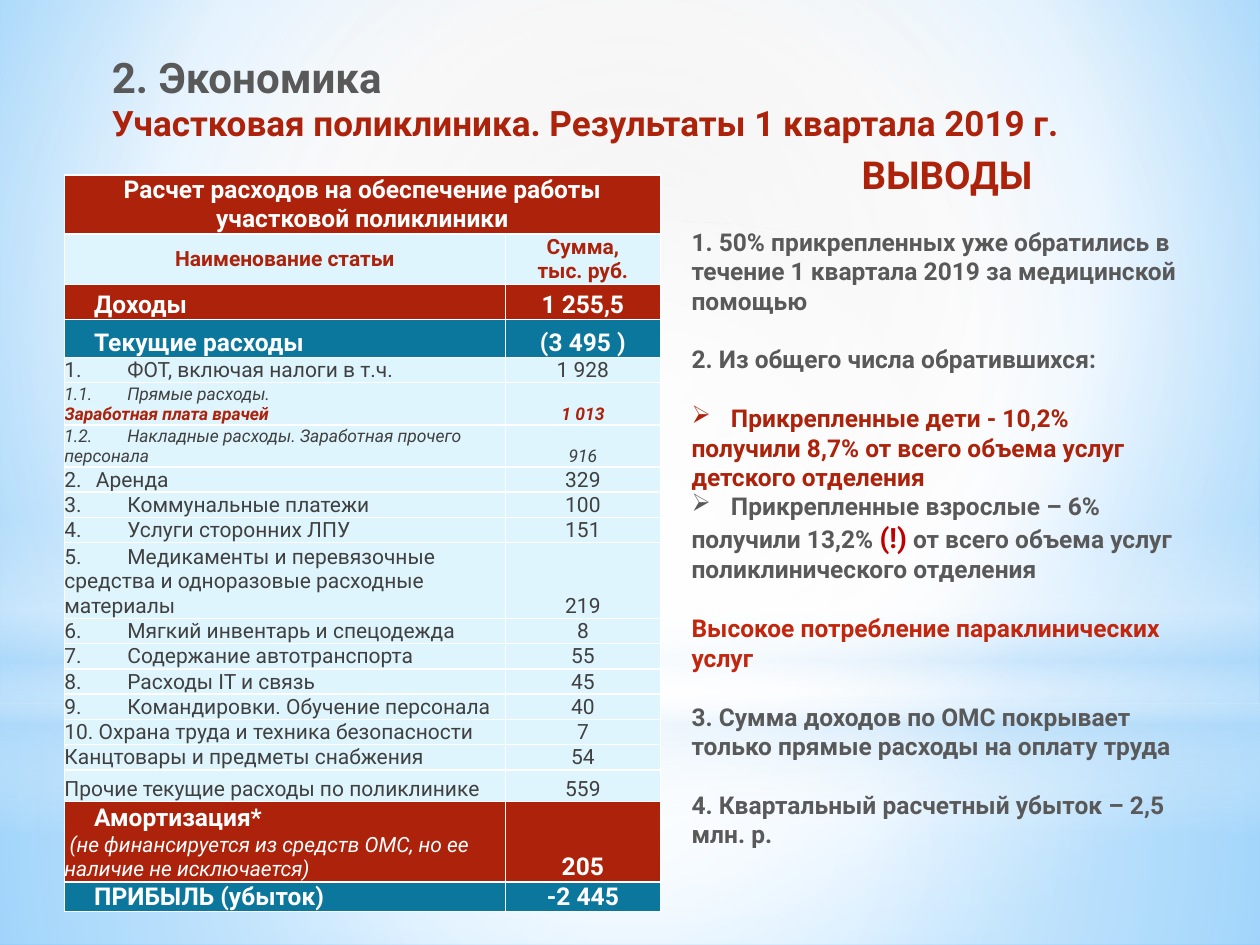
"""Build the slide on the clinic's first-quarter economics."""
from lxml import etree
from pptx import Presentation
from pptx.dml.color import RGBColor
from pptx.enum.shapes import MSO_SHAPE
from pptx.enum.text import MSO_ANCHOR, MSO_AUTO_SIZE, PP_ALIGN
from pptx.oxml.ns import qn
from pptx.util import Pt

RECT, OVAL = MSO_SHAPE.RECTANGLE, MSO_SHAPE.OVAL
LEFT, MID = PP_ALIGN.LEFT, PP_ALIGN.CENTER
BASE, CORE = MSO_ANCHOR.BOTTOM, MSO_ANCHOR.MIDDLE
GROW = MSO_AUTO_SIZE.SHAPE_TO_FIT_TEXT
FONT = "Roboto"
GAP = 16.8
STEP = 17
HEX = {
    "white": "FFFFFF", "mist": "D9D9D9", "sky": "5BB9FF", "haze": "B4DCFA",
    "red": "AD220B", "teal": "0C779D", "pale": "DFF5FD", "gray": "595959",
    "dark": "404040", "alert": "C00000", "warm": "C3260C",
}


def node(root, tag, **attrs):
    """Append a drawing element with the given attributes."""
    return etree.SubElement(root, qn("a:" + tag), {k: str(v) for k, v in attrs.items()})


def blend(root, fill, stops, focus=None):
    """Fill with a circular gradient around focus, or a vertical one."""
    fill.gradient()
    grad = next(root.iter(qn("a:gradFill")))
    for child in list(grad):
        grad.remove(child)
    row = node(grad, "gsLst")
    for pos, name, alpha in stops:
        tint = node(node(row, "gs", pos=pos * 1000), "srgbClr", val=HEX[name])
        if alpha < 100:
            node(tint, "alpha", val=alpha * 1000)
    if focus:
        ring = node(grad, "path", path="circle")
        node(ring, "fillToRect", **{k: v * 1000 for k, v in zip("ltrb", focus)})
    else:
        node(grad, "lin", ang=90 * 60000, scaled=0)


def veil(slide, kind, box, stops, focus=None):
    """Add a borderless shape with a translucent gradient."""
    shape = slide.shapes.add_shape(kind, *map(Pt, box))
    shape.shadow.inherit = False
    shape.line.fill.background()
    blend(shape.element, shape.fill, stops, focus)


def write(para, runs, align=LEFT, space=0):
    """Add runs of (text, size, colour, style) to a paragraph."""
    para.alignment = align
    para.space_before = Pt(space)
    for text, size, tint, style in runs:
        if text == "\n":
            para.add_line_break()
            continue
        run = para.add_run()
        run.text = text
        font = run.font
        font.name, font.size = FONT, Pt(size)
        font.bold, font.italic = "b" in style, "i" in style
        font.color.rgb = RGBColor.from_string(HEX[tint])


def inset(para, first, left=0):
    """Set the first-line indent and left margin."""
    props = para._p.get_or_add_pPr()
    props.set("marL", str(Pt(left)))
    props.set("indent", str(Pt(first)))
    return props


def label(slide, box, lines):
    """Add a text box of (runs, align, space, bullet) lines."""
    shape = slide.shapes.add_textbox(*map(Pt, box))
    frame = shape.text_frame
    frame.word_wrap = True
    frame.auto_size = GROW
    for num, (runs, align, space, mark) in enumerate(lines):
        para = frame.add_paragraph() if num else frame.paragraphs[0]
        write(para, runs, align, space)
        if mark:
            node(inset(para, -22.5, 22.5), "buChar", char=mark)


def paint(cell, tint, anchor=BASE):
    """Give a cell white borders, a fill and no margins."""
    props = cell._tc.get_or_add_tcPr()
    for side in ("lnL", "lnR", "lnT", "lnB"):
        line = node(props, side, w=Pt(1))
        node(node(line, "solidFill"), "srgbClr", val=HEX["white"])
    cell.fill.solid()
    cell.fill.fore_color.rgb = RGBColor.from_string(HEX[tint])
    cell.vertical_anchor = anchor
    cell.margin_left = cell.margin_right = cell.margin_top = cell.margin_bottom = 0


def fill(cell, lines, align=LEFT, first=()):
    """Write paragraphs into a cell, each with its own indent."""
    for num, runs in enumerate(lines):
        para = cell.text_frame.paragraphs[0] if num == 0 else cell.text_frame.add_paragraph()
        write(para, runs, align)
        if num < len(first):
            inset(para, first[num])


def plain(text, size=12, tint="dark", style=""):
    """Return one run."""
    return (text, size, tint, style)


def costs():
    """Return table rows of (height, fill, name lines, sum lines, indents)."""
    def band(high, tint, name, total):
        return (high, tint, [[plain(name, 14, "white", "b")]],
                [[plain(total, 14, "white", "b")]], [STEP])

    def item(name, total, high=13.7):
        return (high, "pale", [[plain(name)]], [[plain(total)]], [])

    head = ("red", "b")
    return [
        (32.4, "red", [[plain(text, 14, "white", "b")] for text in
                       ("Расчет расходов на обеспечение работы", "участковой поликлиники")], [], []),
        (27.4, "pale", [[plain("Наименование статьи", 12, *head)]],
         [[plain("Сумма,", 12, *head)], [plain("тыс. руб.", 12, *head)]], []),
        band(20.2, "red", "Доходы", "1 255,5"),
        band(21.6, "teal", "Текущие расходы", "(3 495 )"),
        item("1.\tФОТ, включая налоги в т.ч.", "1 928"),
        (23.8, "pale", [[plain("1.1.\tПрямые расходы.", 10, "dark", "i"), plain("\n"),
                         plain("Заработная плата врачей", 10, "red", "bi")]],
         [[plain("1 013", 10, "red", "bi")]], []),
        (14.4, "pale", [[plain("1.2.\tНакладные расходы. Заработная прочего персонала", 10, "dark", "i")]],
         [[plain("916", 10, "dark", "i")]], []),
        item("Аренда", "329"),
        item("3.\tКоммунальные платежи", "100"),
        item("4.\tУслуги сторонних ЛПУ", "151"),
        item("5.\tМедикаменты и перевязочные средства и одноразовые расходные материалы", "219", 27.4),
        item("6.\tМягкий инвентарь и спецодежда", "8"),
        item("7.\tСодержание автотранспорта", "55"),
        item("8.\tРасходы IT и связь", "45"),
        item("9.\tКомандировки. Обучение персонала", "40"),
        item("10. Охрана труда и техника безопасности", "7"),
        item("Канцтовары и предметы снабжения", "54"),
        item("Прочие текущие расходы по поликлинике", "559", 18),
        (46, "red", [[plain("Амортизация*", 14, "white", "b")],
                     [plain("(не финансируется из средств ОМС, но ее наличие не исключается)", 12, "white", "i")]],
         [[plain("205", 14, "white", "b")]], [STEP, 3]),
        band(15.8, "teal", "ПРИБЫЛЬ (убыток)", "-2 445"),
    ]


def grid(slide, rows):
    """Add the cost table."""
    table = slide.shapes.add_table(len(rows), 2, Pt(36.8), Pt(100), Pt(340.6), Pt(408)).table
    table.first_row = table.horz_banding = False
    table.columns[0].width, table.columns[1].width = Pt(252), Pt(88.6)
    for num, (high, tint, name, total, first) in enumerate(rows):
        table.rows[num].height = Pt(high)
        left, right = table.cell(num, 0), table.cell(num, 1)
        for cell in (left, right):
            paint(cell, tint, CORE if num == 1 else BASE)
        fill(left, name, MID if num < 2 else LEFT, first)
        fill(right, total, MID)
        para = left.text_frame.paragraphs[0]
        if "\t" in para.text:
            stops = node(inset(para, 0), "tabLst")
            node(stops, "tab", pos=Pt(21.6), algn="l")
        elif para.text == "Аренда":
            node(inset(para, -18, 18), "buAutoNum", type="arabicPeriod", startAt=2)
    table.cell(0, 0).merge(table.cell(0, 1))


def scene(slide):
    """Paint the background and its veils."""
    mid = (50, 50, 50, 50)
    blend(slide.element, slide.background.fill,
          [(0, "mist", 100), (60, "white", 100), (100, "sky", 100)], (20, 10, 20, 60))
    veil(slide, RECT, (0, 401.8, 720, 138.2),
         [(0, "white", 91), (37, "white", 76), (100, "haze", 79)], mid)
    veil(slide, RECT, (0, 0, 720, 401.8),
         [(0, "white", 89), (48, "white", 62), (100, "haze", 79)], mid)
    veil(slide, RECT, (0, 296.6, 720, 180),
         [(0, "white", 0), (29, "white", 30), (45, "haze", 40),
          (55, "white", 26), (65, "haze", 60), (100, "white", 0)])
    veil(slide, OVAL, (0, 126, 720, 401.8), [(0, "white", 100), (56, "white", 0)], mid)


def main():
    """Build and save the slide."""
    deck = Presentation()
    deck.slide_width, deck.slide_height = Pt(720), Pt(540)
    slide = deck.slides.add_slide(deck.slide_layouts[6])
    scene(slide)

    def note(text, space=GAP, tint="gray", mark=None):
        return ([plain(text, 14, tint, "b")], LEFT, space, mark)

    label(slide, (56.9, 25.9, 607, 60.5), [
        ([plain("2. Экономика", 24, "gray", "b")], LEFT, 0, None),
        ([plain("Участковая поликлиника. Результаты 1 квартала 2019 г.", 20, "red", "b")], LEFT, 0, None),
    ])
    grid(slide, costs())
    label(slide, (388.1, 82.8, 306, 392.4), [
        ([plain("ВЫВОДЫ", 22, "red", "b")], MID, 0, None),
        note("1. 50% прикрепленных уже обратились в течение 1 квартала 2019 за медицинской помощью"),
        note("2. Из общего числа обратившихся:"),
        note("Прикрепленные дети - 10,2%", GAP, "red", "➢"),
        note("получили 8,7% от всего объема услуг детского отделения", 0, "red"),
        note("Прикрепленные взрослые – 6%", 0, "gray", "➢"),
        ([plain("получили 13,2% ", 14, "gray", "b"), plain("(!)", 16, "alert", "b"),
          plain(" от всего объема услуг поликлинического отделения", 14, "gray", "b")], LEFT, 0, None),
        note("Высокое потребление параклинических услуг", GAP, "warm"),
        note("3. Сумма доходов по ОМС покрывает только прямые расходы на оплату труда"),
        note("4. Квартальный расчетный убыток – 2,5 млн. р."),
    ])
    deck.save("out.pptx")


if __name__ == "__main__":
    main()
